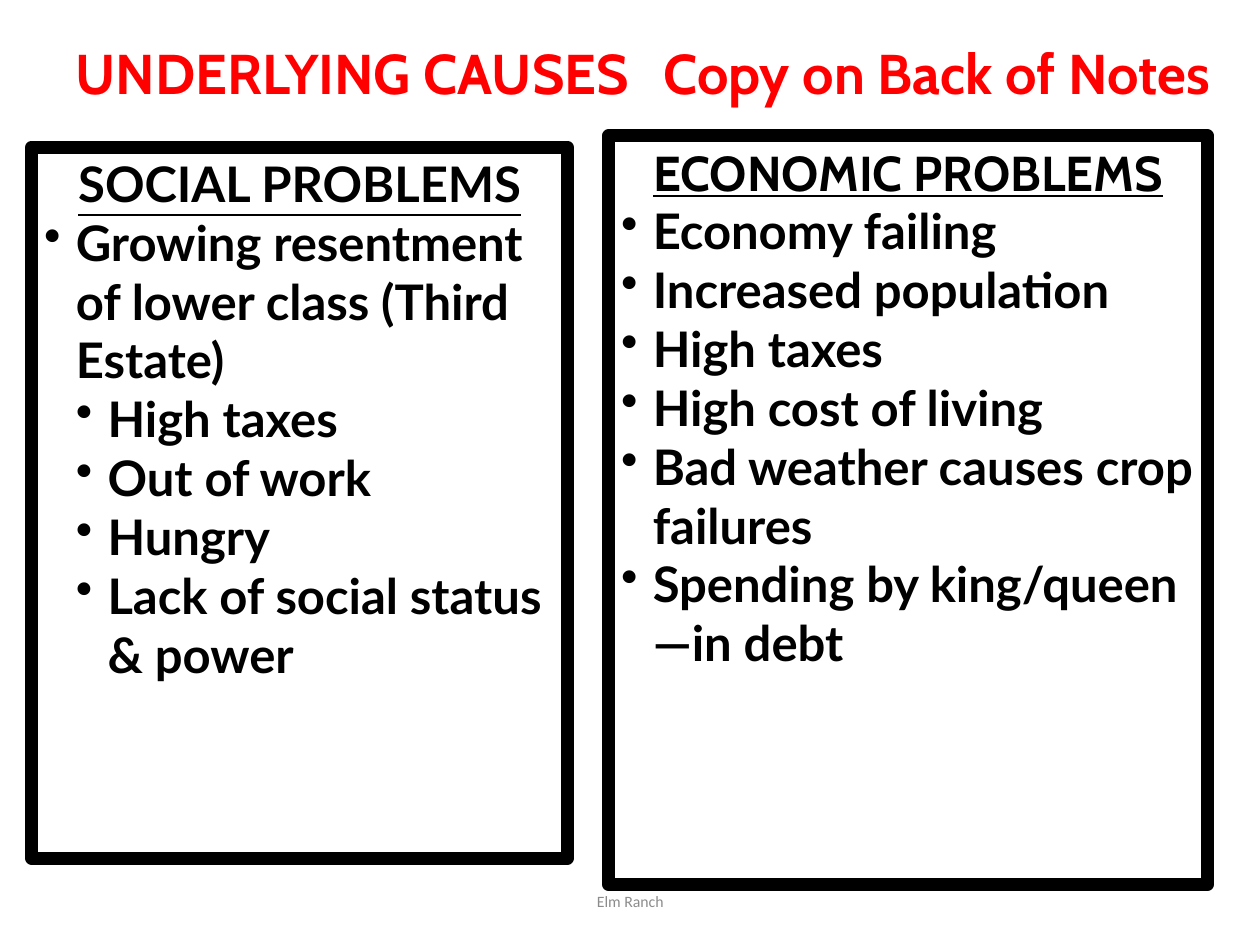
from lxml import etree
from pptx import Presentation
from pptx.dml.color import RGBColor
from pptx.enum.shapes import MSO_SHAPE
from pptx.enum.text import MSO_ANCHOR, MSO_AUTO_SIZE, PP_ALIGN
from pptx.oxml.ns import qn
from pptx.util import Cm, Pt

RED = RGBColor(0xFF, 0x00, 0x00)
BLACK = RGBColor(0x00, 0x00, 0x00)
GRAY = RGBColor(0x8C, 0x8C, 0x8C)

RECTANGLE = MSO_SHAPE.RECTANGLE
LEFT, CENTER = PP_ALIGN.LEFT, PP_ALIGN.CENTER
TOP, MIDDLE = MSO_ANCHOR.TOP, MSO_ANCHOR.MIDDLE
FIXED_SIZE = MSO_AUTO_SIZE.NONE
TITLE_ONLY = 5

# Each point is its outline level and its wording.
SOCIAL_POINTS = [
    (0, "Growing resentment of lower class (Third Estate)"),
    (1, "High taxes"),
    (1, "Out of work"),
    (1, "Hungry"),
    (1, "Lack of social status & power"),
]
ECONOMIC_POINTS = [
    (0, "Economy failing"),
    (0, "Increased population"),
    (0, "High taxes"),
    (0, "High cost of living"),
    (0, "Bad weather causes crop failures"),
    (0, "Spending by king/queen—in debt"),
]


def write(paragraph, text, *, font, size, color=BLACK, bold=True,
          underline=False, align=LEFT):
    paragraph.alignment = align
    run = paragraph.add_run()
    run.text = text
    run.font.name = font
    run.font.size = Pt(size)
    run.font.color.rgb = color
    run.font.bold = bold
    run.font.underline = underline


def add_bullet(paragraph, level, step):
    """Hang the paragraph behind a dot, one step further in per level."""
    paragraph.level = level
    properties = paragraph._p.get_or_add_pPr()
    properties.set("marL", str(step * (level + 1)))
    properties.set("indent", str(-step))
    etree.SubElement(properties, qn("a:buChar"), char="•")


def add_tab_stop(paragraph, position):
    properties = paragraph._p.get_or_add_pPr()
    tabs = etree.SubElement(properties, qn("a:tabLst"))
    etree.SubElement(tabs, qn("a:tab"), pos=str(position), algn="l")


class CausesSlide:
    heading_font = "Cabin"
    body_font = "Lato"
    footer_font = "Calibri"
    body_size = 28
    border = Pt(7.5)
    bullet_step = Cm(0.64)

    def __init__(self, presentation):
        layout = presentation.slide_layouts[TITLE_ONLY]
        self.slide = presentation.slides.add_slide(layout)

    def frame(self, shape, anchor):
        text_frame = shape.text_frame
        text_frame.word_wrap = True
        text_frame.auto_size = FIXED_SIZE
        text_frame.vertical_anchor = anchor
        return text_frame

    def title(self, topic, instruction, left, top, width, height, gap_at):
        title = self.slide.shapes.title
        title.left, title.top = left, top
        title.width, title.height = width, height
        heading = self.frame(title, TOP).paragraphs[0]
        write(heading, f"{topic}\t{instruction}",
              font=self.heading_font, size=32, color=RED)
        add_tab_stop(heading, gap_at)

    def panel(self, heading, heading_font, points, left, top, width, height):
        panel = self.slide.shapes.add_shape(RECTANGLE, left, top, width, height)
        panel.shadow.inherit = False
        panel.fill.background()
        panel.line.color.rgb = BLACK
        panel.line.width = self.border
        text_frame = self.frame(panel, TOP)
        write(text_frame.paragraphs[0], heading, font=heading_font,
              size=self.body_size, underline=True, align=CENTER)
        for level, point in points:
            paragraph = text_frame.add_paragraph()
            write(paragraph, point, font=self.body_font, size=self.body_size)
            add_bullet(paragraph, level, self.bullet_step)

    def footer(self, text, left, top, width, height):
        footer = self.slide.shapes.add_textbox(left, top, width, height)
        write(self.frame(footer, MIDDLE).paragraphs[0], text,
              font=self.footer_font, size=9, color=GRAY, bold=False,
              align=CENTER)


def main():
    presentation = Presentation()
    presentation.slide_width = Cm(25.4)
    presentation.slide_height = Cm(19.05)

    causes = CausesSlide(presentation)
    causes.title("UNDERLYING CAUSES", "Copy on Back of Notes",
                 Cm(1.27), Cm(0.64), Cm(24.13), Cm(1.63), gap_at=Cm(11.85))
    causes.panel("SOCIAL PROBLEMS", causes.body_font, SOCIAL_POINTS,
                 Cm(0.64), Cm(2.97), Cm(10.8), Cm(14.33))
    causes.panel("ECONOMIC PROBLEMS", causes.heading_font, ECONOMIC_POINTS,
                 Cm(12.27), Cm(2.74), Cm(12.07), Cm(15.09))
    causes.footer("Elm Ranch", Cm(8.41), Cm(17.65), Cm(8.59), Cm(1.02))

    presentation.save("out.pptx")


if __name__ == "__main__":
    main()
